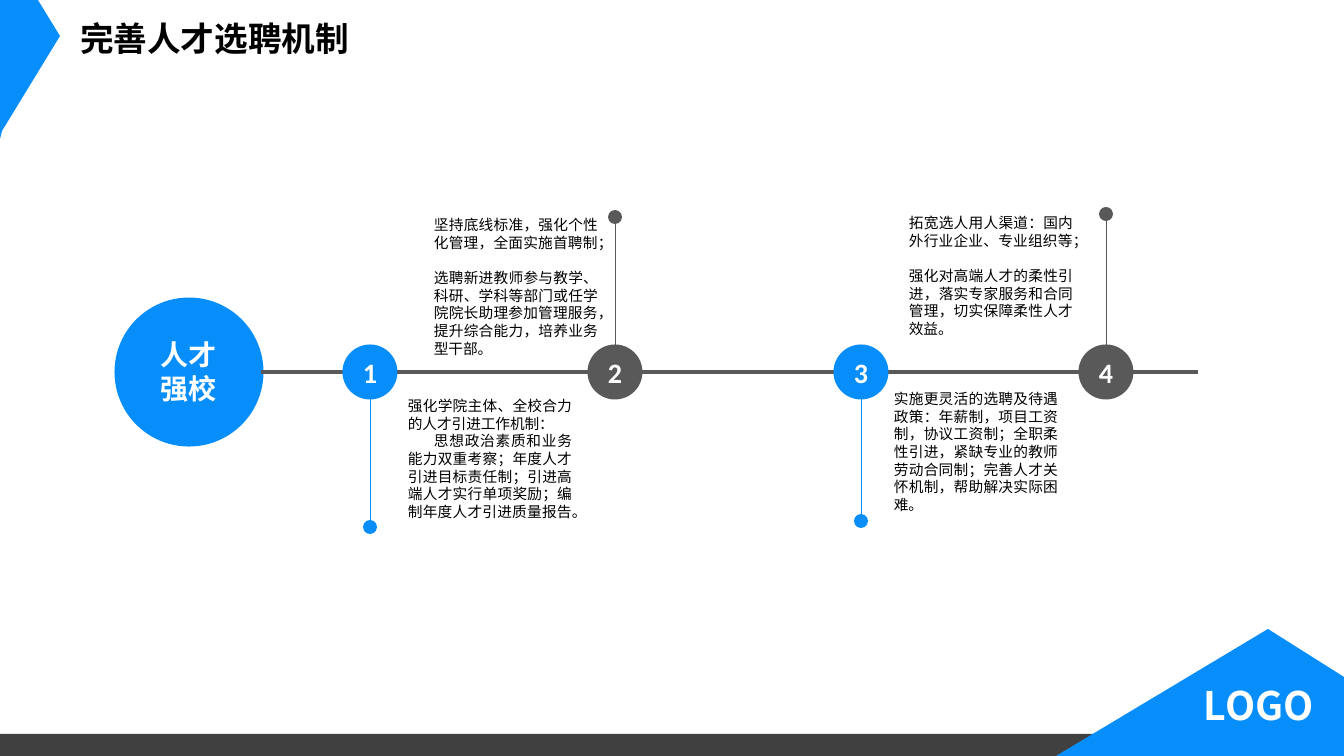
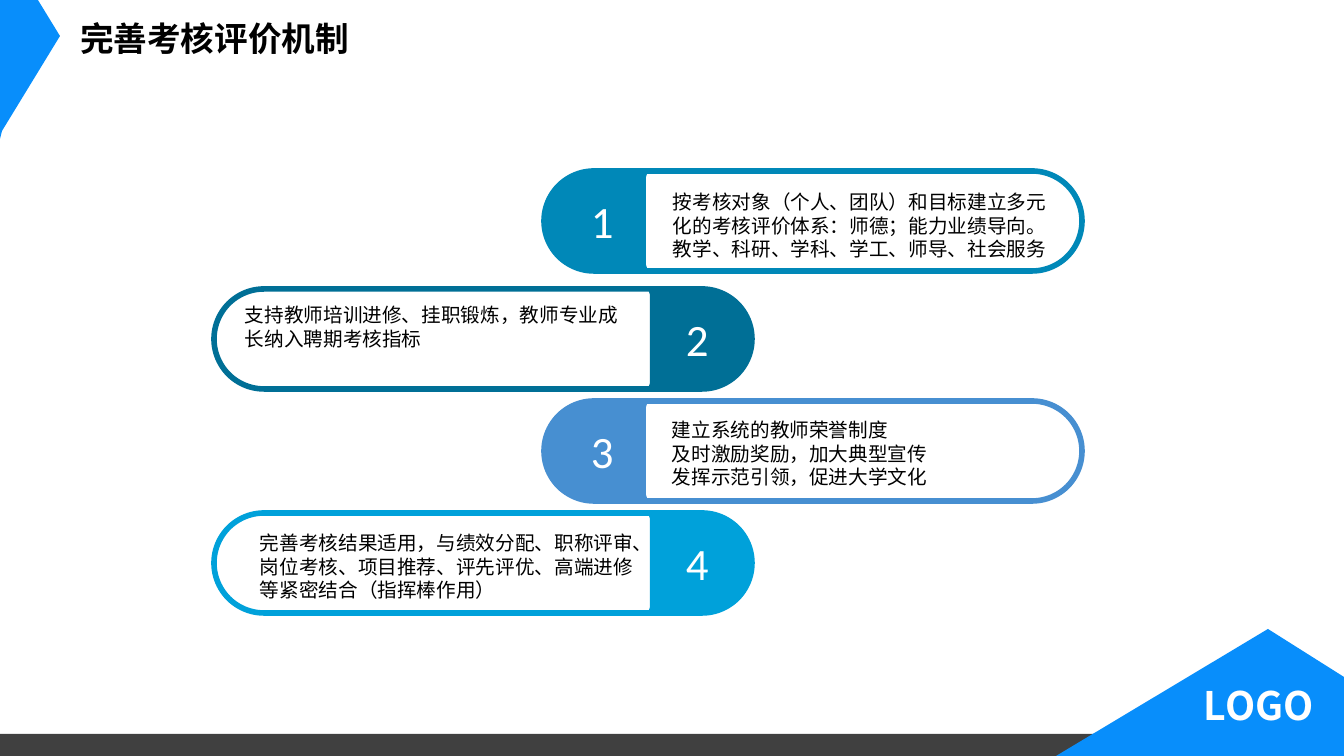
import math

from pptx import Presentation
from pptx import util as u
from pptx.dml.color import RGBColor
from pptx.enum import shapes, text
from pptx.oxml.xmlchemy import OxmlElement

BLUE = RGBColor(0x08, 0x8E, 0xFB)
GRAY = RGBColor(0x59, 0x59, 0x59)
BAR = RGBColor(0x40, 0x40, 0x40)
BLACK = RGBColor(0, 0, 0)
WHITE = RGBColor(255, 255, 255)
TEAL = RGBColor(0x00, 0x88, 0xB8)
DEEP_TEAL = RGBColor(0x00, 0x6F, 0x96)
STEEL = RGBColor(0x47, 0x8F, 0xD1)
CYAN = RGBColor(0x00, 0xA1, 0xDA)

CJK = "Noto Sans CJK SC"
LATIN = "Calibri"
SCALE = 914400 / 100.8
LEFT = text.PP_ALIGN.LEFT
CENTER = text.PP_ALIGN.CENTER
JUSTIFY = text.PP_ALIGN.JUSTIFY
OVAL = shapes.MSO_SHAPE.OVAL

AXIS_Y = 372
PILL_W, PILL_H = 538, 100

STEPS = [
    (370, 527, BLUE, 398, 392,
     "强化学院主体、全校合力的人才引进工作机制：\n"
     "思想政治素质和业务能力双重考察；年度人才引进目标责任制；"
     "引进高端人才实行单项奖励；编制年度人才引进质量报告。"),
    (615, 217, GRAY, 424, 211,
     "坚持底线标准，强化个性化管理，全面实施首聘制；\n"
     "选聘新进教师参与教学、科研、学科等部门或任学院院长助理参加管理服务，"
     "提升综合能力，培养业务型干部。"),
    (861, 521, BLUE, 884, 385,
     "实施更灵活的选聘及待遇政策：年薪制，项目工资制，协议工资制；"
     "全职柔性引进，紧缺专业的教师劳动合同制；完善人才关怀机制，帮助解决实际困难。"),
    (1106, 214, GRAY, 899, 209,
     "拓宽选人用人渠道：国内外行业企业、专业组织等；\n"
     "强化对高端人才的柔性引进，落实专家服务和合同管理，切实保障柔性人才效益。"),
]

MEASURES = [
    (544, 171, TEAL, 663, 185,
     "按考核对象（个人、团队）和目标建立多元化的考核评价体系：师德；能力业绩导向。\n"
     "教学、科研、学科、学工、师导、社会服务"),
    (214, 289, DEEP_TEAL, 235, 298,
     "支持教师培训进修、挂职锻炼，教师专业成长纳入聘期考核指标"),
    (544, 401, STEEL, 662, 413,
     "建立系统的教师荣誉制度\n及时激励奖励，加大典型宣传\n发挥示范引领，促进大学文化"),
    (214, 513, CYAN, 250, 526,
     "完善考核结果适用，与绩效分配、职称评审、岗位考核、项目推荐、"
     "评先评优、高端进修等紧密结合（指挥棒作用）"),
]


def px(*lengths):
    return [u.Emu(round(length * SCALE)) for length in lengths]


class Deck:
    def __init__(self):
        self.prs = Presentation()
        self.prs.slide_width, self.prs.slide_height = px(1344, 756)
        self.slide = None

    def new_slide(self, heading):
        self.slide = self.prs.slides.add_slide(self.prs.slide_layouts[5])
        title = self.slide.shapes.title
        title.left, title.top, title.width, title.height = px(70, 13, 463, 50)
        self.set_text(title.text_frame, heading, 24, bold=True)
        self.shape(shapes.MSO_SHAPE.RECTANGLE, 0, 734, 1115, 22, BAR)
        self.outline([(1056, 756), (1268, 629), (1344, 677), (1344, 756)], BLUE)
        self.outline([(0, 0), (38, 0), (60, 36), (2, 131), (0, 139)], BLUE)
        self.label(1194, 676, 142, 57, "LOGO", 28, color=WHITE, bold=True)

    def set_text(self, frame, words, size, color=BLACK, font=CJK, bold=False,
                 align=LEFT, anchor=text.MSO_ANCHOR.TOP):
        frame.text = words
        frame.word_wrap = True
        frame.auto_size = text.MSO_AUTO_SIZE.NONE
        frame.vertical_anchor = anchor
        for paragraph in frame.paragraphs:
            paragraph.alignment = align
            if font == CJK:
                paragraph.line_spacing = u.Pt(size * 1.2)
            for run in paragraph.runs:
                run.font.name = font
                run.font.size = u.Pt(size)
                run.font.bold = bold
                run.font.color.rgb = color
                east_asian = OxmlElement("a:ea")
                east_asian.set("typeface", CJK)
                run._r.get_or_add_rPr().append(east_asian)

    def label(self, x, y, w, h, words, size, **style):
        box = self.slide.shapes.add_textbox(*px(x, y, w, h))
        self.set_text(box.text_frame, words, size, **style)
        return box.text_frame.paragraphs

    def paint(self, shape, fill):
        shape.shadow.inherit = False
        shape.fill.solid()
        shape.fill.fore_color.rgb = fill
        shape.line.fill.background()
        return shape

    def shape(self, preset, x, y, w, h, fill):
        return self.paint(self.slide.shapes.add_shape(preset, *px(x, y, w, h)), fill)

    def disc(self, x, y, diameter, fill):
        radius = diameter / 2
        return self.shape(OVAL, x - radius, y - radius, diameter, diameter, fill)

    def outline(self, points, fill):
        builder = self.slide.shapes.build_freeform(*points[0], scale=SCALE)
        builder.add_line_segments(points[1:], close=True)
        return self.paint(builder.convert_to_shape(), fill)

    def line(self, x1, y1, x2, y2, color, weight):
        connector = self.slide.shapes.add_connector(
            shapes.MSO_CONNECTOR.STRAIGHT, *px(x1, y1, x2, y2))
        connector.line.color.rgb = color
        connector.line.width = u.Pt(weight)
        connector._element.spPr.append(OxmlElement("a:effectLst"))

    def step(self, number, x, dot_y, color, text_x, text_y, words):
        self.line(x, AXIS_Y, x, dot_y, color, 0.5)
        self.disc(x, dot_y, 14, color)
        badge = self.disc(x, AXIS_Y, 55, color)
        self.set_text(badge.text_frame, str(number), 20, WHITE, LATIN, True,
                      CENTER, text.MSO_ANCHOR.MIDDLE)
        return self.label(text_x, text_y, 184, 170, words, 10.5, align=JUSTIFY)

    def pill(self, number, x, y, color, text_x, text_y, words):
        frame = self.shape(shapes.MSO_SHAPE.ROUNDED_RECTANGLE, x, y, PILL_W, PILL_H, WHITE)
        frame.adjustments[0] = 0.5
        frame.fill.background()
        frame.line.color.rgb = color
        frame.line.width = u.Pt(4)
        radius = PILL_H / 2
        cap = [(104, 0), (102, 6), (102, 94), (104, 100)]
        for degrees in range(90, 271, 5):
            angle = math.radians(degrees)
            cap.append((radius + radius * math.cos(angle), radius + radius * math.sin(angle)))
        on_right = number % 2 == 0
        self.outline([(x + (PILL_W - dx if on_right else dx), y + dy) for dx, dy in cap], color)
        self.label(x + (462 if on_right else 37), y + 18, 62, 64, str(number), 32,
                   color=WHITE, font=LATIN)
        self.label(text_x, text_y, 397, 82, words, 14)


def recruitment(deck):
    deck.new_slide("完善人才选聘机制")
    deck.disc(189, AXIS_Y, 149, BLUE)
    deck.label(151, 333, 95, 78, "人才强校", 20, color=WHITE, bold=True)
    deck.line(261, AXIS_Y, 1198, AXIS_Y, GRAY, 3.25)
    notes = [deck.step(number, *step) for number, step in enumerate(STEPS, 1)]
    notes[0][1]._p.get_or_add_pPr().set("indent", str(px(26)[0]))
    for note in (notes[1], notes[3]):
        note[1].space_before = u.Pt(12.6)


def assessment(deck):
    deck.new_slide("完善考核评价机制")
    for number, measure in enumerate(MEASURES, 1):
        deck.pill(number, *measure)


def main():
    deck = Deck()
    recruitment(deck)
    assessment(deck)
    deck.prs.save("out.pptx")


if __name__ == "__main__":
    main()
